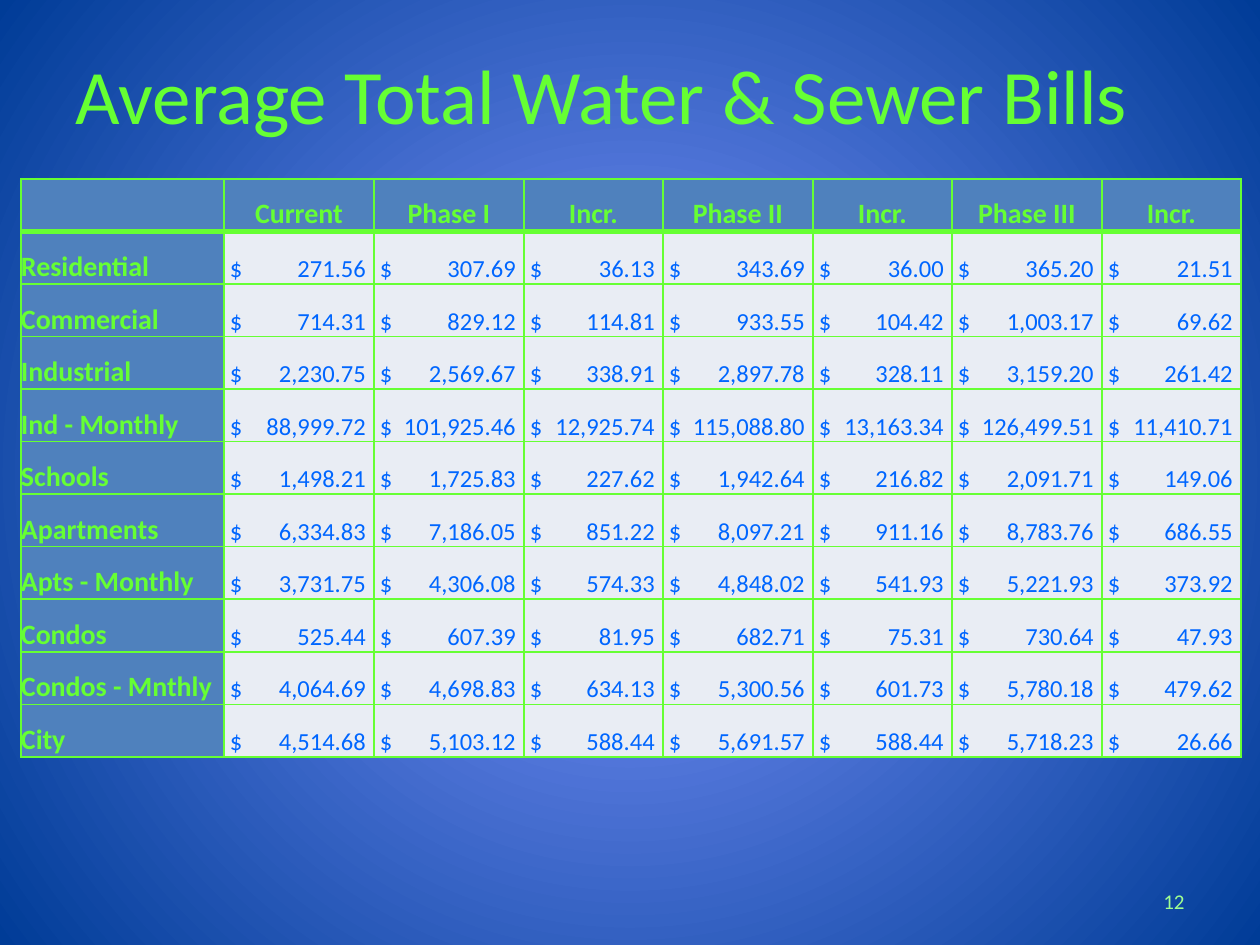
from dataclasses import dataclass

from lxml.etree import SubElement
from pptx import Presentation
from pptx.dml.color import RGBColor
from pptx.enum.text import MSO_ANCHOR, MSO_AUTO_SIZE, PP_ALIGN
from pptx.oxml.ns import qn
from pptx.util import Emu, Pt

FONT = "Calibri"
COLORS = {
    "green": "66FF33",
    "pale_green": "A0FF90",
    "blue_text": "0066FF",
    "label_fill": "4F81BD",
    "value_fill": "E9EDF4",
    "glow": "7F96FF",
    "deep": "003C97",
}
HEADERS = ["", "Current", "Phase I", "Incr.", "Phase II", "Incr.", "Phase III", "Incr."]
COL_WIDTHS = [203, 150, 150, 139, 150, 139, 150, 139]
DOLLAR_INDENT = 6
VALUE_INSET = 8
ROW_HEIGHT_TOTAL = 578


@dataclass(frozen=True)
class TextStyle:
    size: int
    color: str
    bold: bool = False
    align: PP_ALIGN = PP_ALIGN.LEFT


@dataclass(frozen=True)
class BillRow:
    customer: str
    amounts: tuple[str, ...]


TITLE = TextStyle(44, "green")
PAGE_NUMBER = TextStyle(12, "pale_green", align=PP_ALIGN.RIGHT)
HEADER = TextStyle(16, "green", True, PP_ALIGN.CENTER)
LABEL = TextStyle(16, "green", True)
VALUE = TextStyle(14, "blue_text")

BILLS = [
    BillRow("Residential", ("271.56", "307.69", "36.13", "343.69", "36.00", "365.20", "21.51")),
    BillRow("Commercial", ("714.31", "829.12", "114.81", "933.55", "104.42", "1,003.17", "69.62")),
    BillRow("Industrial", ("2,230.75", "2,569.67", "338.91", "2,897.78", "328.11", "3,159.20", "261.42")),
    BillRow("Ind - Monthly", ("88,999.72", "101,925.46", "12,925.74", "115,088.80", "13,163.34",
                              "126,499.51", "11,410.71")),
    BillRow("Schools", ("1,498.21", "1,725.83", "227.62", "1,942.64", "216.82", "2,091.71", "149.06")),
    BillRow("Apartments", ("6,334.83", "7,186.05", "851.22", "8,097.21", "911.16", "8,783.76", "686.55")),
    BillRow("Apts - Monthly", ("3,731.75", "4,306.08", "574.33", "4,848.02", "541.93", "5,221.93", "373.92")),
    BillRow("Condos", ("525.44", "607.39", "81.95", "682.71", "75.31", "730.64", "47.93")),
    BillRow("Condos - Mnthly", ("4,064.69", "4,698.83", "634.13", "5,300.56", "601.73", "5,780.18", "479.62")),
    BillRow("City", ("4,514.68", "5,103.12", "588.44", "5,691.57", "588.44", "5,718.23", "26.66")),
]


def px(n: int) -> Emu:
    return Emu(round(n * 914400 / 126))


def rgb(name: str) -> RGBColor:
    return RGBColor.from_string(COLORS[name])


def write(p, text: str, style: TextStyle) -> None:
    p.text = text
    p.alignment = style.align
    for r in p.runs:
        r.font.name = FONT
        r.font.size = Pt(style.size)
        r.font.bold = style.bold
        r.font.color.rgb = rgb(style.color)


def paint_background(s) -> None:
    fill = s.background.fill
    fill.gradient()
    for stop, name in zip(fill.gradient_stops, ("glow", "deep")):
        stop.color.rgb = rgb(name)
    grad = next(s.element.iter(qn("a:gradFill")))
    for lin in grad.findall(qn("a:lin")):
        grad.remove(lin)
    circle = SubElement(grad, qn("a:path"), path="circle")
    SubElement(circle, qn("a:fillToRect"), l="50000", t="50000", r="50000", b="50000")


def add_tab(p, position: int) -> None:
    tabs = SubElement(p._p.get_or_add_pPr(), qn("a:tabLst"))
    SubElement(tabs, qn("a:tab"), pos=str(px(position)), algn="r")


def add_borders(cell, top: int, bottom: int) -> None:
    tcPr = cell._tc.get_or_add_tcPr()
    for side, width in (("L", 1), ("R", 1), ("T", top), ("B", bottom)):
        ln = SubElement(tcPr, qn(f"a:ln{side}"), w=str(Pt(width)))
        solid = SubElement(ln, qn("a:solidFill"))
        SubElement(solid, qn("a:srgbClr"), val=COLORS["green"])


def draw_cell(cell, text: str, row: int, col: int) -> None:
    is_value = row > 0 and col > 0
    add_borders(cell, 3 if row == 1 else 1, 3 if row == 0 else 1)
    cell.fill.solid()
    cell.fill.fore_color.rgb = rgb("value_fill" if is_value else "label_fill")
    cell.vertical_anchor = MSO_ANCHOR.BOTTOM
    cell.margin_left = px(DOLLAR_INDENT if is_value else 0)
    cell.margin_right = cell.margin_top = cell.margin_bottom = 0
    p = cell.text_frame.paragraphs[0]
    if is_value:
        add_tab(p, COL_WIDTHS[col] - DOLLAR_INDENT - VALUE_INSET)
        write(p, f"$\t{text}", VALUE)
    else:
        write(p, text, HEADER if row == 0 else LABEL)


def draw_table(s) -> None:
    rows = [HEADERS] + [[bill.customer, *bill.amounts] for bill in BILLS]
    table = s.shapes.add_table(len(rows), len(HEADERS), px(21), px(179),
                               px(sum(COL_WIDTHS)), px(ROW_HEIGHT_TOTAL)).table
    table.first_row = table.horz_banding = False
    for column, width in zip(table.columns, COL_WIDTHS):
        column.width = px(width)
    for i, texts in enumerate(rows):
        for j, text in enumerate(texts):
            draw_cell(table.cell(i, j), text, i, j)


def place_text(sp, left: int, top: int, width: int, height: int,
               text: str, style: TextStyle) -> None:
    sp.left, sp.top, sp.width, sp.height = map(px, (left, top, width, height))
    tf = sp.text_frame
    tf.word_wrap = True
    tf.auto_size = MSO_AUTO_SIZE.NONE
    tf.vertical_anchor = MSO_ANCHOR.MIDDLE
    write(tf.paragraphs[0], text, style)


def main() -> None:
    prs = Presentation()
    prs.slide_width, prs.slide_height = px(1260), px(945)
    s = prs.slides.add_slide(prs.slide_layouts[5])
    paint_background(s)
    place_text(s.shapes.title, 63, 10, 1134, 168, "Average Total Water & Sewer Bills", TITLE)
    page_box = s.shapes.add_textbox(0, 0, 0, 0)
    place_text(page_box, 903, 876, 294, 50, "12", PAGE_NUMBER)
    draw_table(s)
    prs.save("out.pptx")


if __name__ == "__main__":
    main()
